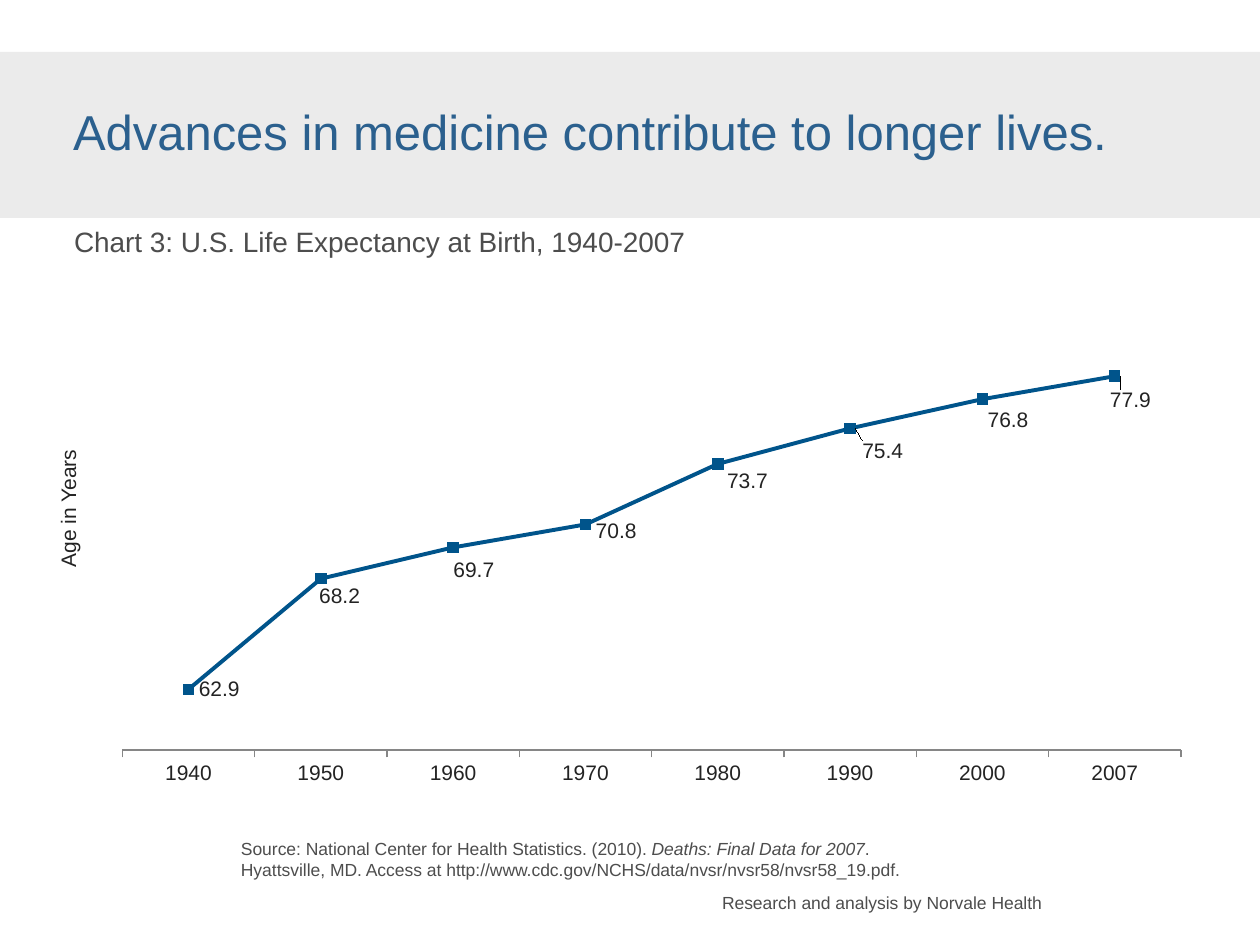
from dataclasses import dataclass

from lxml import etree
from pptx import Presentation
from pptx.chart.data import CategoryChartData
from pptx.dml.color import RGBColor
from pptx.enum.chart import (XL_CHART_TYPE, XL_LABEL_POSITION,
                             XL_MARKER_STYLE, XL_TICK_MARK)
from pptx.enum.shapes import MSO_SHAPE
from pptx.enum.text import MSO_ANCHOR
from pptx.oxml.ns import qn
from pptx.util import Emu, Pt

LINE_MARKERS = XL_CHART_TYPE.LINE_MARKERS
LABEL_RIGHT = XL_LABEL_POSITION.RIGHT
SQUARE = XL_MARKER_STYLE.SQUARE
TICK_OUTSIDE = XL_TICK_MARK.OUTSIDE
RECTANGLE = MSO_SHAPE.RECTANGLE
TOP = MSO_ANCHOR.TOP

PX_PER_INCH = 126
TITLE_ONLY = 5


@dataclass(frozen=True)
class Theme:
    font: str = "Arial"
    band: str = "EBEBEB"
    title: str = "2B608E"
    body: str = "4D4D4D"
    chart_text: str = "232323"
    line: str = "00548B"
    axis: str = "868686"
    title_size: int = 28
    subtitle_size: int = 16
    chart_size: int = 12
    note_size: int = 10


def px(length):
    return Emu(round(length * 914400 / PX_PER_INCH))


def color(value):
    return RGBColor.from_string(value)


def add_layout(parent, position, **values):
    """Give a chart element a manual layout, in fractions of the chart."""
    for old in parent.findall(qn("c:layout")):
        parent.remove(old)
    layout = etree.Element(qn("c:layout"))
    manual = etree.SubElement(layout, qn("c:manualLayout"))
    for tag, value in values.items():
        etree.SubElement(manual, qn(f"c:{tag}")).set("val", str(value))
    parent.insert(position, layout)


class SlideBuilder:
    def __init__(self, slide, theme):
        self.slide = slide
        self.theme = theme

    def style_font(self, font, size, ink):
        font.name = self.theme.font
        font.size = Pt(size)
        font.color.rgb = color(ink)

    def fill_text(self, frame, runs, size, ink, spacing=None):
        frame.word_wrap = True
        frame.vertical_anchor = TOP
        paragraph = frame.paragraphs[0]
        paragraph.line_spacing = spacing
        for words, italic in runs:
            run = paragraph.add_run()
            run.text = words
            self.style_font(run.font, size, ink)
            run.font.italic = italic

    def clear_insets(self, frame):
        frame.margin_left = frame.margin_right = 0
        frame.margin_top = frame.margin_bottom = 0

    def band(self, *box):
        band = self.slide.shapes.add_shape(RECTANGLE, *map(px, box))
        band.shadow.inherit = False
        band.fill.solid()
        band.fill.fore_color.rgb = color(self.theme.band)
        band.line.fill.background()
        # Behind the title placeholder
        self.slide.shapes._spTree.insert(2, band._element)

    def title(self, words, *box):
        title = self.slide.shapes.title
        title.left, title.top, title.width, title.height = map(px, box)
        self.clear_insets(title.text_frame)
        self.fill_text(title.text_frame, [(words, False)],
                       self.theme.title_size, self.theme.title, 0.8)
        title.text_frame.paragraphs[0].alignment = 1

    def text(self, runs, size, *box, spacing=None):
        text = self.slide.shapes.add_textbox(*map(px, box))
        self.clear_insets(text.text_frame)
        self.fill_text(text.text_frame, runs, size, self.theme.body, spacing)

    def axis_title(self, words, *box):
        label = self.slide.shapes.add_textbox(*map(px, box))
        label.rotation = 270
        self.fill_text(label.text_frame, [(words, False)],
                       self.theme.chart_size, self.theme.chart_text)

    def line_chart(self, values, value_range, label_shifts, *box):
        theme = self.theme
        data = CategoryChartData(number_format="0.0")
        data.categories = values.keys()
        data.add_series("Series 1", values.values())
        chart = self.slide.shapes.add_chart(
            LINE_MARKERS, *map(px, box), data).chart
        chart.has_legend = False
        chart.has_title = False
        self.style_font(chart.font, theme.chart_size, theme.chart_text)
        add_layout(chart._chartSpace.chart.plotArea, 0, layoutTarget="inner",
                   xMode="edge", yMode="edge", x=0.014, y=0.036,
                   w=0.965, h=0.861)

        # Axes
        years, ages = chart.category_axis, chart.value_axis
        years.major_tick_mark = TICK_OUTSIDE
        years.format.line.color.rgb = color(theme.axis)
        ages.minimum_scale, ages.maximum_scale = value_range
        ages.has_major_gridlines = False
        ages.visible = False

        # Line and markers
        chart.plots[0].vary_by_categories = False
        series = chart.plots[0].series[0]
        series.smooth = False
        series.format.line.color.rgb = color(theme.line)
        series.format.line.width = Pt(2.25)
        series.marker.style = SQUARE
        series.marker.size = 6
        series.marker.format.fill.solid()
        series.marker.format.fill.fore_color.rgb = color(theme.line)
        series.marker.format.line.color.rgb = color(theme.line)

        # Value labels, each nudged clear of the line
        labels = series.data_labels
        labels.show_value = True
        labels.position = LABEL_RIGHT
        labels.number_format = "0.0"
        labels.number_format_is_linked = False
        self.style_font(labels.font, theme.chart_size, theme.chart_text)
        for index in range(1, len(values)):
            label = series.points[index].data_label
            label.position = LABEL_RIGHT
            self.style_font(label.font, theme.chart_size, theme.chart_text)
        width, height = box[2:]
        nodes = series._element.xpath("c:dLbls/c:dLbl")
        for node, (right, down) in zip(nodes, label_shifts):
            add_layout(node, 1, x=round(right / width, 4),
                       y=round(down / height, 4))


def main():
    theme = Theme()
    deck = Presentation()
    deck.slide_width, deck.slide_height = px(1260), px(945)
    slide = deck.slides.add_slide(deck.slide_layouts[TITLE_ONLY])
    page = SlideBuilder(slide, theme)

    # Heading
    page.band(0, 52, 1260, 166)
    page.title("Advances in medicine contribute to longer lives.",
               73, 113, 1134, 48)
    page.text([("Chart 3: U.S. Life Expectancy at Birth, 1940-2007", False)],
              theme.subtitle_size, 74, 231, 990, 28, spacing=0.8)

    # Life expectancy chart
    life_expectancy = {"1940": 62.9, "1950": 68.2, "1960": 69.7, "1970": 70.8,
                       "1980": 73.7, "1990": 75.4, "2000": 76.8, "2007": 77.9}
    label_shifts = [(-12, 18), (-10, 23), (0, 7), (-1, 17),
                    (2, 23), (-5, 21), (-15, 24)]
    page.line_chart(life_expectancy, (60, 80), label_shifts,
                    107, 315, 1097, 485)
    page.axis_title("Age in Years", -15, 478, 166, 38)

    # Source and credit
    page.text([("Source: National Center for Health Statistics. (2010). ", False),
               ("Deaths: Final Data for 2007", True),
               (". Hyattsville, MD. Access at http://www.cdc.gov/NCHS/data/"
                "nvsr/nvsr58/nvsr58_19.pdf.", False)],
              theme.note_size, 241, 838, 716, 43)
    page.text([("Research and analysis by Norvale Health", False)],
              theme.note_size, 722, 892, 333, 21)

    deck.save("out.pptx")


if __name__ == "__main__":
    main()
